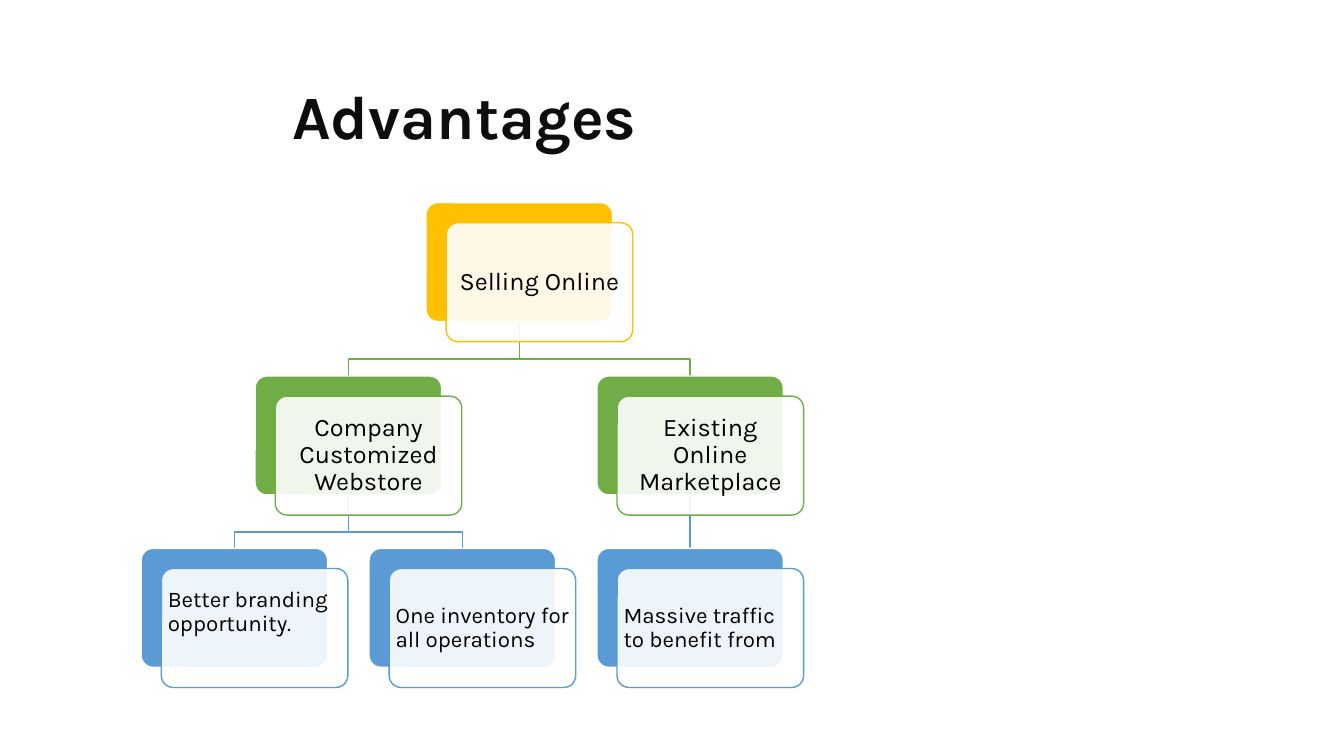
from lxml.etree import SubElement
from pptx import Presentation
from pptx.dml.color import RGBColor
from pptx.enum.shapes import MSO_CONNECTOR, MSO_SHAPE
from pptx.enum.text import MSO_ANCHOR, PP_ALIGN
from pptx.oxml.ns import qn
from pptx.util import Inches, Pt

FONT = "Karla"
CARD_WIDTH, CARD_HEIGHT = 1.85, 1.18
FIRST_LEFT, COLUMN_STEP = 1.4, 2.26
LEVEL_TOPS = [2.01, 3.73, 5.44]
LEVEL_COLOURS = ["FFC000", "70AD47", "5B9BD5"]
FRONT_SHIFT = 0.2
ELBOW_DROP = 0.37

# Key: level, column, text
CARDS = {
    "root": (0, 1.25, "Selling Online"),
    "webstore": (1, 0.5, "Company Customized Webstore"),
    "branding": (2, 0, "Better branding opportunity."),
    "inventory": (2, 1, "One inventory for all operations"),
    "marketplace": (1, 2, "Existing Online Marketplace"),
    "traffic": (2, 2, "Massive traffic to benefit from"),
}
BRANCHES = [
    ("marketplace", "traffic"),
    ("root", "marketplace"),
    ("webstore", "inventory"),
    ("webstore", "branding"),
    ("root", "webstore"),
]


def colour(hex_value):
    return RGBColor.from_string(hex_value)


def format_paragraph(para, size, text_colour, align):
    para.alignment = align
    para.line_spacing = 0.9
    para.font.name = FONT
    para.font.size = Pt(size)
    para.font.color.rgb = colour(text_colour)


def add_title(page, text):
    title = page.shapes.title
    title.left, title.top = Inches(0.3), Inches(0.46)
    title.width, title.height = Inches(8.77), Inches(1.45)
    frame = title.text_frame
    frame.text = text
    frame.vertical_anchor = MSO_ANCHOR.MIDDLE
    format_paragraph(frame.paragraphs[0], 44, "0D0D0D", PP_ALIGN.CENTER)
    frame.paragraphs[0].font.bold = True


def add_branch(page, parent, child):
    parent_level, parent_column, _ = CARDS[parent]
    child_level, child_column, _ = CARDS[child]
    start_x, end_x = (
        Inches(FIRST_LEFT + COLUMN_STEP * column + CARD_WIDTH / 2)
        for column in (parent_column, child_column)
    )
    start_y = Inches(LEVEL_TOPS[parent_level] + CARD_HEIGHT)
    end_y = Inches(LEVEL_TOPS[child_level])
    if start_x == end_x:
        branch = page.shapes.add_connector(
            MSO_CONNECTOR.STRAIGHT, start_x, start_y, end_x, end_y)
        SubElement(branch._element.spPr, qn("a:effectLst"))
    else:
        elbow_y = start_y + Inches(ELBOW_DROP)
        builder = page.shapes.build_freeform(start_x, start_y)
        builder.add_line_segments(
            [(start_x, elbow_y), (end_x, elbow_y), (end_x, end_y)], close=False)
        branch = builder.convert_to_shape()
        branch.fill.background()
        branch.shadow.inherit = False
    branch.line.color.rgb = colour(LEVEL_COLOURS[child_level])
    branch.line.width = Pt(1)


def add_panel(page, left, top, fill, line):
    panel = page.shapes.add_shape(
        MSO_SHAPE.ROUNDED_RECTANGLE, Inches(left), Inches(top),
        Inches(CARD_WIDTH), Inches(CARD_HEIGHT))
    panel.adjustments[0] = 0.1
    panel.shadow.inherit = False
    panel.fill.solid()
    panel.fill.fore_color.rgb = colour(fill)
    panel.line.color.rgb = colour(line)
    panel.line.width = Pt(1)
    return panel


def add_card(page, level, column, text, bottom_margin=0.03):
    left, top = FIRST_LEFT + COLUMN_STEP * column, LEVEL_TOPS[level]
    accent = LEVEL_COLOURS[level]
    add_panel(page, left, top, accent, "FFFFFF")
    front = add_panel(page, left + FRONT_SHIFT, top + FRONT_SHIFT, "FFFFFF", accent)
    # Let the back panel show through
    fill_colour = front._element.spPr.find(qn("a:solidFill"))[0]
    SubElement(fill_colour, qn("a:alpha"), val="90000")

    frame = front.text_frame
    frame.word_wrap = True
    frame.vertical_anchor = MSO_ANCHOR.MIDDLE
    frame.margin_left = frame.margin_right = frame.margin_top = Inches(0.03)
    frame.margin_bottom = Inches(bottom_margin)
    frame.text = text
    is_leaf = level == len(LEVEL_TOPS) - 1
    format_paragraph(frame.paragraphs[0], 16 if is_leaf else 18, "000000",
                     PP_ALIGN.LEFT if is_leaf else PP_ALIGN.CENTER)


def main():
    deck = Presentation()
    deck.slide_width, deck.slide_height = Inches(13.33), Inches(7.5)
    page = deck.slides.add_slide(deck.slide_layouts[5])
    add_title(page, "Advantages ")

    # Branches lie behind the cards
    for parent, child in BRANCHES:
        add_branch(page, parent, child)

    # The branding text sits higher in its card
    for name, card in CARDS.items():
        add_card(page, *card, bottom_margin=0.35 if name == "branding" else 0.03)

    deck.save("out.pptx")


if __name__ == "__main__":
    main()
